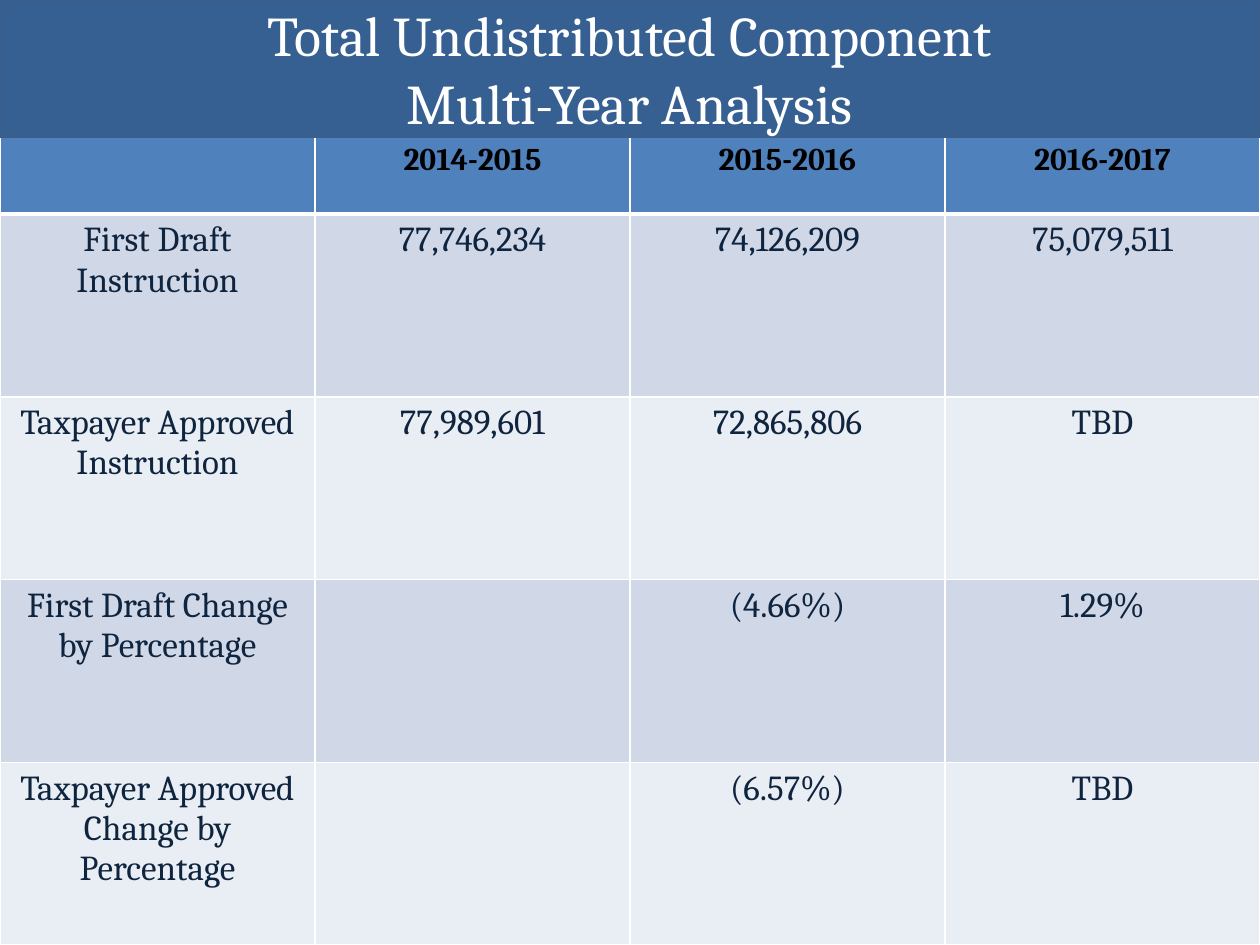
import lxml.etree
import pptx
import pptx.dml.color
import pptx.enum.text
import pptx.oxml.ns
import pptx.util

RGBColor = pptx.dml.color.RGBColor
WHITE = RGBColor(0xFF, 0xFF, 0xFF)
BLACK = RGBColor(0x00, 0x00, 0x00)
NAVY = RGBColor(0x0F, 0x24, 0x3E)
BANNER = RGBColor(0x37, 0x60, 0x92)
BANNER_EDGE = RGBColor(0x3A, 0x5F, 0x8C)
HEADER = RGBColor(0x4F, 0x81, 0xBD)
BANDS = (RGBColor(0xD0, 0xD8, 0xE8), RGBColor(0xE9, 0xED, 0xF4))

WIDTH, HEIGHT = 10, 7.5
BANNER_HEIGHT = 1.08
HEADER_HEIGHT = 0.62

TITLE = ["Total Undistributed Component", "Multi-Year Analysis"]
ROWS = [
    ["", "2014-2015", "2015-2016", "2016-2017"],
    ["First Draft Instruction", "77,746,234", "74,126,209", "75,079,511"],
    ["Taxpayer Approved Instruction", "77,989,601", "72,865,806", "TBD"],
    ["First Draft Change by Percentage", "", "(4.66%)", "1.29%"],
    ["Taxpayer Approved Change by Percentage", "", "(6.57%)", "TBD"],
]


def write(frame, lines, size, color, bold=False, font="Cambria"):
    for index, line in enumerate(lines):
        para = frame.paragraphs[0] if index == 0 else frame.add_paragraph()
        para.alignment = pptx.enum.text.PP_ALIGN.CENTER
        para.font.size = pptx.util.Pt(size)
        if not line:
            continue
        span = para.add_run()
        span.text = line
        span.font.name = font
        span.font.size = pptx.util.Pt(size)
        span.font.bold = bold
        span.font.color.rgb = color


def set_borders(cell, color, bottom):
    properties = cell._tc.get_or_add_tcPr()
    widths = {"a:lnL": 1, "a:lnR": 1, "a:lnT": 1, "a:lnB": bottom}
    for index, (tag, points) in enumerate(widths.items()):
        line = lxml.etree.Element(pptx.oxml.ns.qn(tag), w=str(pptx.util.Pt(points)))
        fill = lxml.etree.SubElement(line, pptx.oxml.ns.qn("a:solidFill"))
        lxml.etree.SubElement(fill, pptx.oxml.ns.qn("a:srgbClr"), val=str(color))
        properties.insert(index, line)


class SlideBuilder:
    def __init__(self, deck):
        self.slide = deck.slides.add_slide(deck.slide_layouts[5])

    def table(self, rows, top, header_height):
        row_count, column_count = len(rows), len(rows[0])
        body_height = (HEIGHT - top - header_height) / (row_count - 1)
        frame = self.slide.shapes.add_table(
            row_count, column_count, 0, pptx.util.Inches(top),
            pptx.util.Inches(WIDTH), pptx.util.Inches(HEIGHT - top))
        for row_index, texts in enumerate(rows):
            is_header = row_index == 0
            row_height = header_height if is_header else body_height
            frame.table.rows[row_index].height = pptx.util.Inches(row_height)
            for column_index, text in enumerate(texts):
                cell = frame.table.cell(row_index, column_index)
                cell.fill.solid()
                cell.fill.fore_color.rgb = HEADER if is_header else BANDS[(row_index - 1) % 2]
                set_borders(cell, WHITE, bottom=3 if row_index == 0 else 1)
                write(cell.text_frame, [text], size=18 if is_header else 20,
                      color=BLACK if is_header else NAVY, bold=is_header)
        return frame

    def banner(self, lines, height, behind):
        title = self.slide.shapes.title
        title.left, title.top = 0, 0
        title.width, title.height = pptx.util.Inches(WIDTH), pptx.util.Inches(height)
        title.fill.solid()
        title.fill.fore_color.rgb = BANNER
        title.line.color.rgb = BANNER_EDGE
        title.line.width = pptx.util.Pt(2)
        title.text_frame.auto_size = pptx.enum.text.MSO_AUTO_SIZE.NONE
        title.text_frame.vertical_anchor = pptx.enum.text.MSO_ANCHOR.MIDDLE
        write(title.text_frame, lines, size=32, color=WHITE)
        behind.element.addnext(title.element)


def main():
    deck = pptx.Presentation()
    deck.slide_width = pptx.util.Inches(WIDTH)
    deck.slide_height = pptx.util.Inches(HEIGHT)
    builder = SlideBuilder(deck)
    table = builder.table(ROWS, top=BANNER_HEIGHT, header_height=HEADER_HEIGHT)
    builder.banner(TITLE, height=BANNER_HEIGHT, behind=table)
    deck.save("out.pptx")


if __name__ == "__main__":
    main()
